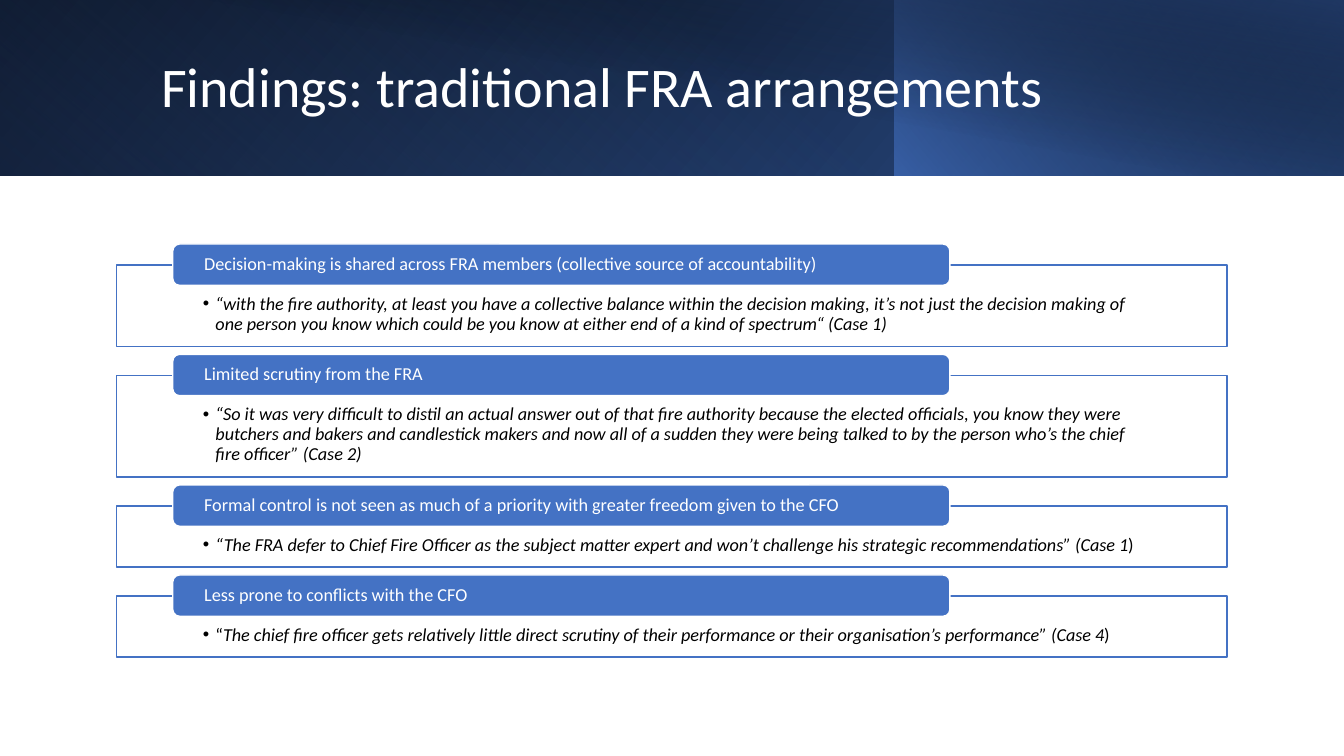
from dataclasses import dataclass

from lxml import etree
from pptx import Presentation
from pptx.dml.color import RGBColor
from pptx.enum.shapes import MSO_SHAPE as Preset
from pptx.enum.text import MSO_ANCHOR as Anchor, PP_ALIGN as Align
from pptx.oxml.ns import qn
from pptx.util import Pt


@dataclass(frozen=True)
class Theme:
    """Colours, font and type sizes of the slide."""
    font: str = "Calibri"
    white: str = "FFFFFF"
    black: str = "000000"
    blue: str = "4472C4"
    deep_blue: str = "2F5597"
    navy: str = "203864"
    title_size: int = 40
    body_size: int = 13


THEME = Theme()

FINDINGS = [
    ("Decision-making is shared across FRA members (collective source of accountability)", 2,
     [("“with the fire authority, at least you have a collective balance within the decision making, "
       "it’s not just the decision making of one person you know which could be you know at either end "
       "of a kind of spectrum“ (Case 1)", True)]),
    ("Limited scrutiny from the FRA", 3,
     [("“So it was very difficult to distil an actual answer out of that fire authority because the "
       "elected officials, you know they were butchers and bakers and candlestick makers and now all of "
       "a sudden they were being talked to by the person who’s the chief fire officer” (Case 2)", True)]),
    ("Formal control is not seen as much of a priority with greater freedom given to the CFO", 1,
     [("“The FRA defer to Chief Fire Officer as the subject matter expert and won’t challenge his "
       "strategic recommendations” (Case 1", True), (")", False)]),
    ("Less prone to conflicts with the CFO", 1,
     [("“", False),
      ("The chief fire officer gets relatively little direct scrutiny of their performance or their "
       "organisation’s performance” (Case 4", True), (")", False)]),
]


def write_text(shape, runs, size=THEME.body_size, color=THEME.white, anchor=Anchor.MIDDLE,
               insets=(7.2, 3.6, 7.2, 3.6), bullet_indent=0):
    """Write (text, italic) runs into a shape as one formatted paragraph."""
    frame = shape.text_frame
    frame.word_wrap = True
    frame.vertical_anchor = anchor
    frame.margin_left, frame.margin_top, frame.margin_right, frame.margin_bottom = map(Pt, insets)
    paragraph = frame.paragraphs[0]
    paragraph.alignment = Align.LEFT
    paragraph.line_spacing = 0.9
    for text, italic in runs:
        run = paragraph.add_run()
        run.text = text
        run.font.name = THEME.font
        run.font.size = Pt(size)
        run.font.italic = italic
        run.font.color.rgb = RGBColor.from_string(color)
    if bullet_indent:
        properties = paragraph._p.get_or_add_pPr()
        properties.set("marL", str(Pt(bullet_indent)))
        properties.set("indent", str(-Pt(bullet_indent)))
        etree.SubElement(properties, qn("a:buFont"), typeface="Arial")
        etree.SubElement(properties, qn("a:buChar"), char="•")


def add_box(slide, preset, box, fill, line=None):
    """Add a filled preset shape with an optional outline."""
    shape = slide.shapes.add_shape(preset, *map(Pt, box))
    shape.shadow.inherit = False
    shape.fill.solid()
    shape.fill.fore_color.rgb = RGBColor.from_string(fill)
    if line:
        shape.line.color.rgb = RGBColor.from_string(line)
        shape.line.width = Pt(1)
    else:
        shape.line.fill.background()
    return shape


def set_alpha(color, percent):
    """Set the opacity of a colour element."""
    etree.SubElement(color, qn("a:alpha"), val=str(percent * 1000))


def add_gradient(slide, box, angle, stops):
    """Add a rectangle whose gradient stops are (position, colour, opacity)."""
    shape = add_box(slide, Preset.RECTANGLE, box, THEME.navy)
    solid = shape._element.spPr.find(qn("a:solidFill"))
    gradient = etree.Element(qn("a:gradFill"), rotWithShape="1")
    stop_list = etree.SubElement(gradient, qn("a:gsLst"))
    for position, value, opacity in stops:
        stop = etree.SubElement(stop_list, qn("a:gs"), pos=str(position * 1000))
        set_alpha(etree.SubElement(stop, qn("a:srgbClr"), val=value), opacity)
    etree.SubElement(gradient, qn("a:lin"), ang=str(angle * 60000), scaled="0")
    solid.getparent().replace(solid, gradient)


def add_header(slide, left, top, width, height):
    """Draw the layered gradient band and its title."""
    split = width * 2 / 3 - 1
    add_gradient(slide, (left, top, width, height), 40,
                 [(0, THEME.black, 100), (100, THEME.deep_blue, 100)])
    add_gradient(slide, (left, top, split, height), 130,
                 [(20, THEME.blue, 0), (100, THEME.navy, 55)])
    add_gradient(slide, (left + split, top, width - split, height), 320,
                 [(0, THEME.blue, 66), (100, THEME.black, 30)])
    add_gradient(slide, (left + 36, top, width - 36, height), 280,
                 [(50, THEME.black, 0), (99, THEME.navy, 52)])
    title = slide.shapes.add_textbox(*map(Pt, (left + 108, top + 23, width - 181, 81.4)))
    write_text(title, [("Findings: traditional FRA arrangements", False)], size=THEME.title_size)


def add_finding(slide, left, top, width, height, heading, quote):
    """Draw one outlined quote with its heading tab across the top edge."""
    panel = add_box(slide, Preset.RECTANGLE, (left, top, width, height), THEME.white, THEME.blue)
    set_alpha(panel._element.spPr.find(qn("a:solidFill"))[0], 90)
    write_text(panel, quote, color=THEME.black, anchor=Anchor.TOP,
               insets=(61.5, 21.3, 61.5, 7), bullet_indent=9)
    tab = add_box(slide, Preset.ROUNDED_RECTANGLE, (left + 40, top - 15, width * 0.7, 29.5),
                  THEME.blue, THEME.white)
    write_text(tab, [(heading, False)], insets=(21, 0, 21, 0))


def add_findings(slide, left, top, width):
    """Stack the findings, each as tall as its quote needs."""
    for heading, line_count, quote in FINDINGS:
        height = 29.2 + 14.5 * line_count
        add_finding(slide, left, top, width, height, heading, quote)
        top += height + 20.6


def main():
    """Build and save the slide."""
    presentation = Presentation()
    presentation.slide_width, presentation.slide_height = Pt(960), Pt(540)
    slide = presentation.slides.add_slide(presentation.slide_layouts[6])
    add_header(slide, 0, 0, 960, 125.6)
    add_findings(slide, 83.4, 189.3, 793)
    presentation.save("out.pptx")


if __name__ == "__main__":
    main()
